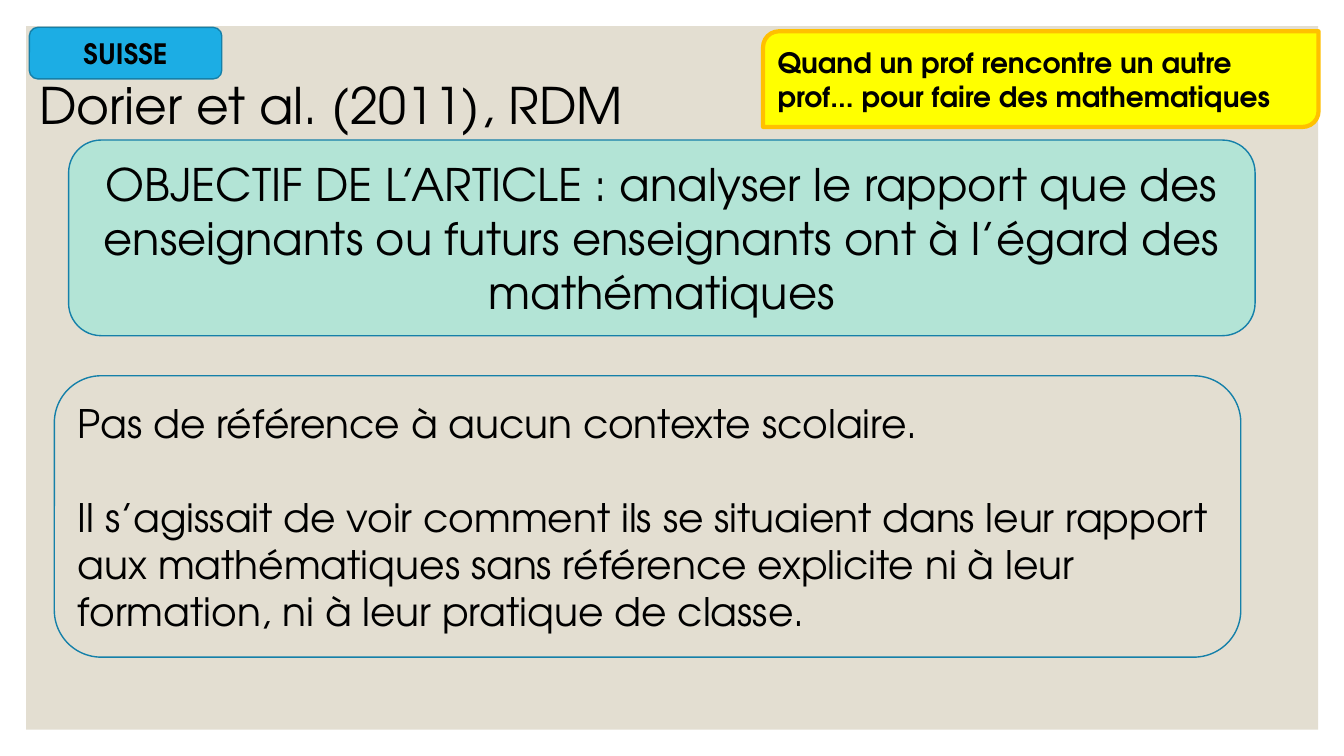
import dataclasses

import pptx
import pptx.dml.color
import pptx.enum.shapes
import pptx.enum.text
import pptx.util

Cm = pptx.util.Cm
Pt = pptx.util.Pt
SHAPES = pptx.enum.shapes.MSO_SHAPE
ALIGN = pptx.enum.text.PP_ALIGN
ANCHOR = pptx.enum.text.MSO_ANCHOR


@dataclasses.dataclass(frozen=True)
class Theme:
    """Colours, font and type sizes of the slide."""

    font: str = "TeX Gyre Adventor"
    text: str = "000000"
    panel: str = "E3DED1"
    country: str = "1CADE4"
    outline: str = "1580A9"
    callout: str = "FFFF00"
    callout_outline: str = "FFC000"
    objective: str = "B3E4D6"
    title_size: int = 36
    objective_size: int = 32
    body_size: int = 28
    label_size: int = 20


THEME = Theme()


def color(value):
    """Return a hexadecimal value as a colour."""
    return pptx.dml.color.RGBColor.from_string(value)


def apply_format(target, values):
    """Set each named attribute on the target."""
    for name, value in values.items():
        setattr(target, name, value)


def write_text(shape, paragraphs, size, bold=False, align=ALIGN.LEFT,
               anchor=ANCHOR.MIDDLE, gap=0):
    """Fill a shape with paragraphs separated by a gap in points."""
    frame = shape.text_frame
    apply_format(frame, {"word_wrap": True, "vertical_anchor": anchor})
    frame.text = "\n".join(paragraphs)
    for index, paragraph in enumerate(frame.paragraphs):
        space = Pt(gap if index else 0)
        apply_format(paragraph, {"alignment": align, "space_before": space})
        font = paragraph.runs[0].font
        apply_format(font, {"name": THEME.font, "size": Pt(size), "bold": bold})
        font.color.rgb = color(THEME.text)


def add_box(slide, kind, place, fill=None, line=None, width=1):
    """Add a preset shape with an optional fill and outline."""
    shape = slide.shapes.add_shape(kind, *map(Cm, place))
    shape.shadow.inherit = False
    if fill:
        shape.fill.solid()
        shape.fill.fore_color.rgb = color(fill)
    else:
        shape.fill.background()
    if line:
        shape.line.color.rgb = color(line)
        shape.line.width = Pt(width)
    else:
        shape.line.fill.background()
    return shape


def add_title(slide, place, text):
    """Add the slide title as a text box."""
    title = slide.shapes.add_textbox(*map(Cm, place))
    write_text(title, [text], THEME.title_size, anchor=ANCHOR.TOP)


def main():
    """Build and save the slide."""
    presentation = pptx.Presentation()
    apply_format(presentation, {"slide_width": Cm(33.87), "slide_height": Cm(19.05)})
    slide = presentation.slides.add_slide(presentation.slide_layouts[6])

    add_box(slide, SHAPES.RECTANGLE, (0.66, 0.66, 32.56, 17.73), THEME.panel)
    add_title(slide, (0.74, 1.75, 31.78, 1.8), "Dorier et al. (2011), RDM")

    callout = add_box(slide, SHAPES.ROUND_2_DIAG_RECTANGLE, (19.23, 0.79, 14, 2.41),
                      THEME.callout, THEME.callout_outline, 3)
    write_text(callout, ["Quand un prof rencontre un autre prof... pour faire des mathematiques"],
               THEME.label_size, bold=True)

    country = add_box(slide, SHAPES.ROUNDED_RECTANGLE, (0.74, 0.69, 4.85, 1.3),
                      THEME.country, THEME.outline)
    write_text(country, ["SUISSE"], THEME.label_size, bold=True, align=ALIGN.CENTER)

    objective = add_box(slide, SHAPES.ROUNDED_RECTANGLE, (1.73, 3.53, 29.9, 4.93),
                        THEME.objective, THEME.outline)
    write_text(objective, ["OBJECTIF DE L’ARTICLE : analyser le rapport que des enseignants "
                           "ou futurs enseignants ont à l’égard des mathématiques"],
               THEME.objective_size, align=ALIGN.CENTER)

    context = add_box(slide, SHAPES.ROUNDED_RECTANGLE, (1.37, 9.47, 29.9, 7.09),
                      line=THEME.outline)
    write_text(context, ["Pas de référence à aucun contexte scolaire.",
                         "Il s’agissait de voir comment ils se situaient dans leur rapport "
                         "aux mathématiques sans référence explicite ni à leur formation, "
                         "ni à leur pratique de classe."],
               THEME.body_size, gap=1.2 * THEME.body_size)

    presentation.save("out.pptx")


if __name__ == "__main__":
    main()
